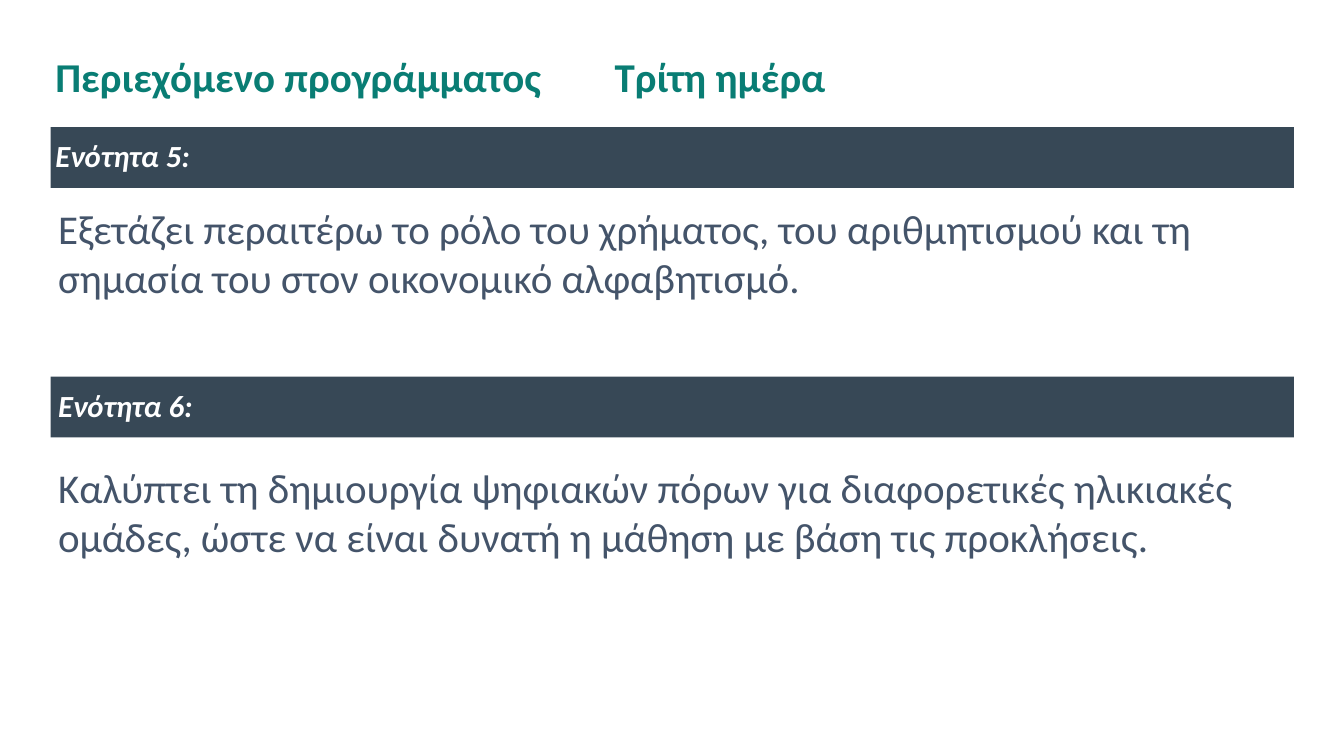
"""Build the third-day programme slide with two unit sections."""
from dataclasses import dataclass

from lxml.etree import SubElement
from pptx import Presentation
from pptx.dml.color import RGBColor as RGB
from pptx.enum.shapes import MSO_SHAPE as SHAPE
from pptx.enum.text import MSO_ANCHOR as ANCHOR, PP_ALIGN as ALIGN
from pptx.oxml.ns import qn
from pptx.util import Inches, Pt

TITLE = ("Περιεχόμενο προγράμματος", "Τρίτη ημέρα")
SECTIONS = [
    {"label": "Ενότητα 5:", "bar_top": 1.38, "indent": 0.05,
     "body": "Εξετάζει περαιτέρω το ρόλο του χρήματος, του αριθμητισμού και τη "
             "σημασία του στον οικονομικό αλφαβητισμό.",
     "body_top": 2.16, "body_height": 1.71},
    {"label": "Ενότητα 6:", "bar_top": 4.09, "indent": 0.08,
     "body": "Καλύπτει τη δημιουργία ψηφιακών πόρων για διαφορετικές ηλικιακές "
             "ομάδες, ώστε να είναι δυνατή η μάθηση με βάση τις προκλήσεις.",
     "body_top": 4.97, "body_height": 1.18},
]

SLIDE_WIDTH, SLIDE_HEIGHT = Pt(1050), Pt(591)
LEFT, WIDTH, BAR_HEIGHT = 0.55, 13.49, 0.66
BODY_LEFT, BODY_WIDTH = 0.58, 13.43
TITLE_TAB = 6.07
INSET = 0.05


@dataclass(frozen=True)
class Theme:
    font: str = "Calibri"
    title: RGB = RGB(0x09, 0x7D, 0x74)
    bar: RGB = RGB(0x37, 0x48, 0x56)
    label: RGB = RGB(0xFF, 0xFF, 0xFF)
    body: RGB = RGB(0x44, 0x54, 0x6A)
    large: int = 32
    small: int = 24
    tight: float = 0.9


THEME = Theme()


def write(sp, text, size, color, bold=False, italic=False,
          anchor=ANCHOR.TOP, align=ALIGN.LEFT, spacing=None, indent=INSET):
    tf = sp.text_frame
    tf.word_wrap = True
    tf.vertical_anchor = anchor
    tf.margin_left = Inches(indent)
    tf.margin_right = tf.margin_top = tf.margin_bottom = Inches(INSET)
    p = tf.paragraphs[0]
    p.alignment = align
    p.line_spacing = spacing
    r = p.add_run()
    r.text = text
    r.font.name, r.font.size = THEME.font, Pt(size)
    r.font.bold, r.font.italic = bold, italic
    r.font.color.rgb = color
    return p


def add_text_box(s, left, top, width, height):
    return s.shapes.add_textbox(Inches(left), Inches(top), Inches(width), Inches(height))


def add_title(s):
    sp = add_text_box(s, LEFT, 0.47, WIDTH, 0.79)
    p = write(sp, "\t".join(TITLE), THEME.large, THEME.title, bold=True,
              anchor=ANCHOR.MIDDLE, spacing=THEME.tight)
    tabs = SubElement(p._p.get_or_add_pPr(), qn("a:tabLst"))
    SubElement(tabs, qn("a:tab"), pos=str(Inches(TITLE_TAB)), algn="l")


def add_section(s, section):
    bar = s.shapes.add_shape(SHAPE.RECTANGLE, Inches(LEFT), Inches(section["bar_top"]),
                             Inches(WIDTH), Inches(BAR_HEIGHT))
    bar.shadow.inherit = False
    bar.fill.solid()
    bar.fill.fore_color.rgb = THEME.bar
    bar.line.fill.background()
    write(bar, section["label"], THEME.small, THEME.label, bold=True, italic=True,
          anchor=ANCHOR.MIDDLE, align=ALIGN.JUSTIFY, spacing=THEME.tight,
          indent=section["indent"])
    body = add_text_box(s, BODY_LEFT, section["body_top"], BODY_WIDTH, section["body_height"])
    write(body, section["body"], THEME.large, THEME.body)


def main():
    prs = Presentation()
    prs.slide_width, prs.slide_height = SLIDE_WIDTH, SLIDE_HEIGHT
    s = prs.slides.add_slide(prs.slide_layouts[6])
    add_title(s)
    for section in SECTIONS:
        add_section(s, section)
    prs.save("out.pptx")


if __name__ == "__main__":
    main()
